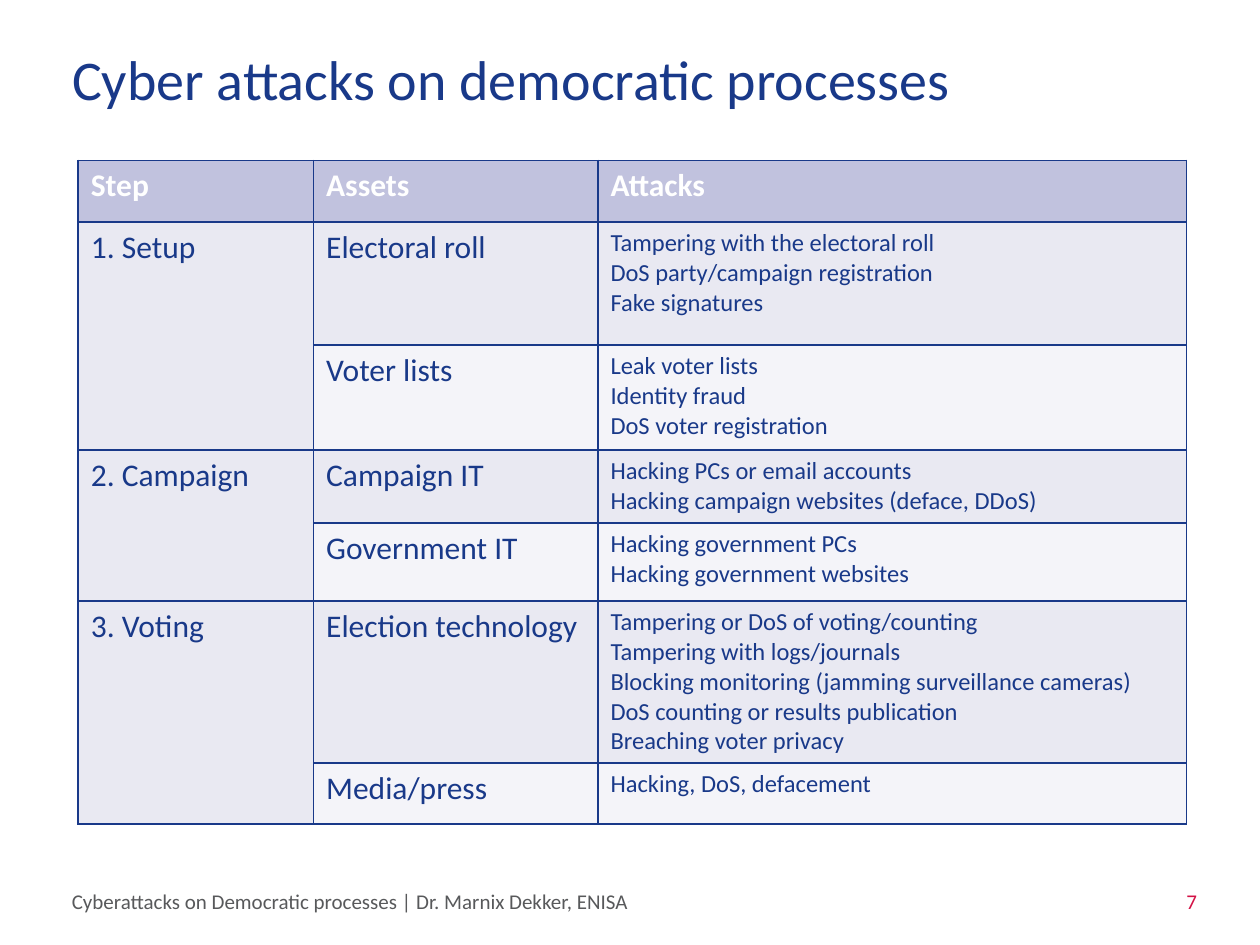
from lxml import etree
from pptx import Presentation
from pptx.dml.color import RGBColor as RGB
from pptx.enum.text import MSO_ANCHOR as Anchor, MSO_AUTO_SIZE as AutoSize, PP_ALIGN as Align
from pptx.oxml.ns import qn
from pptx.util import Pt

COLORS = {
    "navy": "193989", "red": "D31145", "grey": "58595B", "white": "FFFFFF",
    "header": "C1C2DE", "band": "E9E9F2", "light": "F4F4F9",
}

HEADINGS = ["Step", "Assets", "Attacks"]
STEPS = [
    ("1. Setup", [
        ("Electoral roll", ["Tampering with the electoral roll",
                            "DoS party/campaign registration",
                            "Fake signatures"]),
        ("Voter lists", ["Leak voter lists", "Identity fraud", "DoS voter registration"]),
    ]),
    ("2. Campaign", [
        ("Campaign IT", ["Hacking PCs or email accounts",
                         "Hacking campaign websites (deface, DDoS)"]),
        ("Government IT", ["Hacking government PCs", "Hacking government websites"]),
    ]),
    ("3. Voting", [
        ("Election technology", ["Tampering or DoS of voting/counting",
                                 "Tampering with logs/journals",
                                 "Blocking monitoring (jamming surveillance cameras)",
                                 "DoS counting or results publication",
                                 "Breaching voter privacy"]),
        ("Media/press", ["Hacking, DoS, defacement"]),
    ]),
]
COL_WIDTHS = [134.5, 162.5, 336.5]
ROW_HEIGHTS = [35.3, 70.3, 60, 41.7, 44.6, 92.5, 35]


class SlideBuilder:
    font = "Calibri"

    def __init__(self, slide):
        self.slide = slide

    def set_text(self, tf, text, size, color, bold=False, align=Align.LEFT, spacing=None):
        tf.text = text
        for p in tf.paragraphs:
            p.alignment = align
            p.line_spacing = spacing
            for r in p.runs:
                r.font.name, r.font.size, r.font.bold = self.font, Pt(size), bold
                r.font.color.rgb = RGB.from_string(COLORS[color])

    def title(self, text, x, y, w, h):
        s = self.slide.shapes.title
        s.left, s.top, s.width, s.height = Pt(x), Pt(y), Pt(w), Pt(h)
        tf = s.text_frame
        tf.auto_size, tf.vertical_anchor = AutoSize.NONE, Anchor.TOP
        self.set_text(tf, text, 32, "navy", spacing=0.8)

    def footer(self, text, x, y, w, h, color, align=Align.LEFT, right=7.2):
        tf = self.slide.shapes.add_textbox(Pt(x), Pt(y), Pt(w), Pt(h)).text_frame
        tf.word_wrap, tf.vertical_anchor = True, Anchor.MIDDLE
        tf.margin_right = Pt(right)
        self.set_text(tf, text, 12, color, align=align)

    def table(self, x, y, widths, heights):
        table = self.slide.shapes.add_table(
            len(heights), len(widths), Pt(x), Pt(y),
            Pt(sum(widths)), Pt(sum(heights))).table
        for col, w in zip(table.columns, widths):
            col.width = Pt(w)
        for row, h in zip(table.rows, heights):
            row.height = Pt(h)
        return table

    def cell(self, cell, text, fill, size=18, color="navy", bold=False):
        # Borders come before the fill in the cell properties
        props = cell._tc.get_or_add_tcPr()
        for side in ("lnL", "lnR", "lnT", "lnB"):
            line = etree.SubElement(props, qn("a:" + side), w=str(Pt(1)))
            solid = etree.SubElement(line, qn("a:solidFill"))
            etree.SubElement(solid, qn("a:srgbClr"), val=COLORS["navy"])
        cell.fill.solid()
        cell.fill.fore_color.rgb = RGB.from_string(COLORS[fill])
        self.set_text(cell.text_frame, text, size, color, bold)


def main():
    prs = Presentation()
    prs.slide_width, prs.slide_height = Pt(720), Pt(540)
    b = SlideBuilder(prs.slides.add_slide(prs.slide_layouts[5]))

    # Title
    b.title("Cyber attacks on democratic processes", 34, 29.5, 563, 78)

    # Table: each step spans the rows of its assets
    table = b.table(44.7, 91.6, COL_WIDTHS, ROW_HEIGHTS)
    for c, heading in enumerate(HEADINGS):
        b.cell(table.cell(0, c), heading, "header", color="white", bold=True)
    row = 1
    for step, assets in STEPS:
        first = row
        for i, (asset, attacks) in enumerate(assets):
            fill = "light" if i else "band"
            b.cell(table.cell(row, 0), "" if i else step, "band")
            b.cell(table.cell(row, 1), asset, fill)
            b.cell(table.cell(row, 2), "\n".join(attacks), fill, size=14)
            row += 1
        table.cell(first, 0).merge(table.cell(row - 1, 0))

    # Footer and page number
    b.footer("Cyberattacks on Democratic processes | Dr. Marnix Dekker, ENISA",
             34, 500.5, 374, 29, "grey")
    b.footer("7", 522, 500.5, 162, 29, "red", Align.RIGHT, right=0)

    prs.save("out.pptx")


if __name__ == "__main__":
    main()
